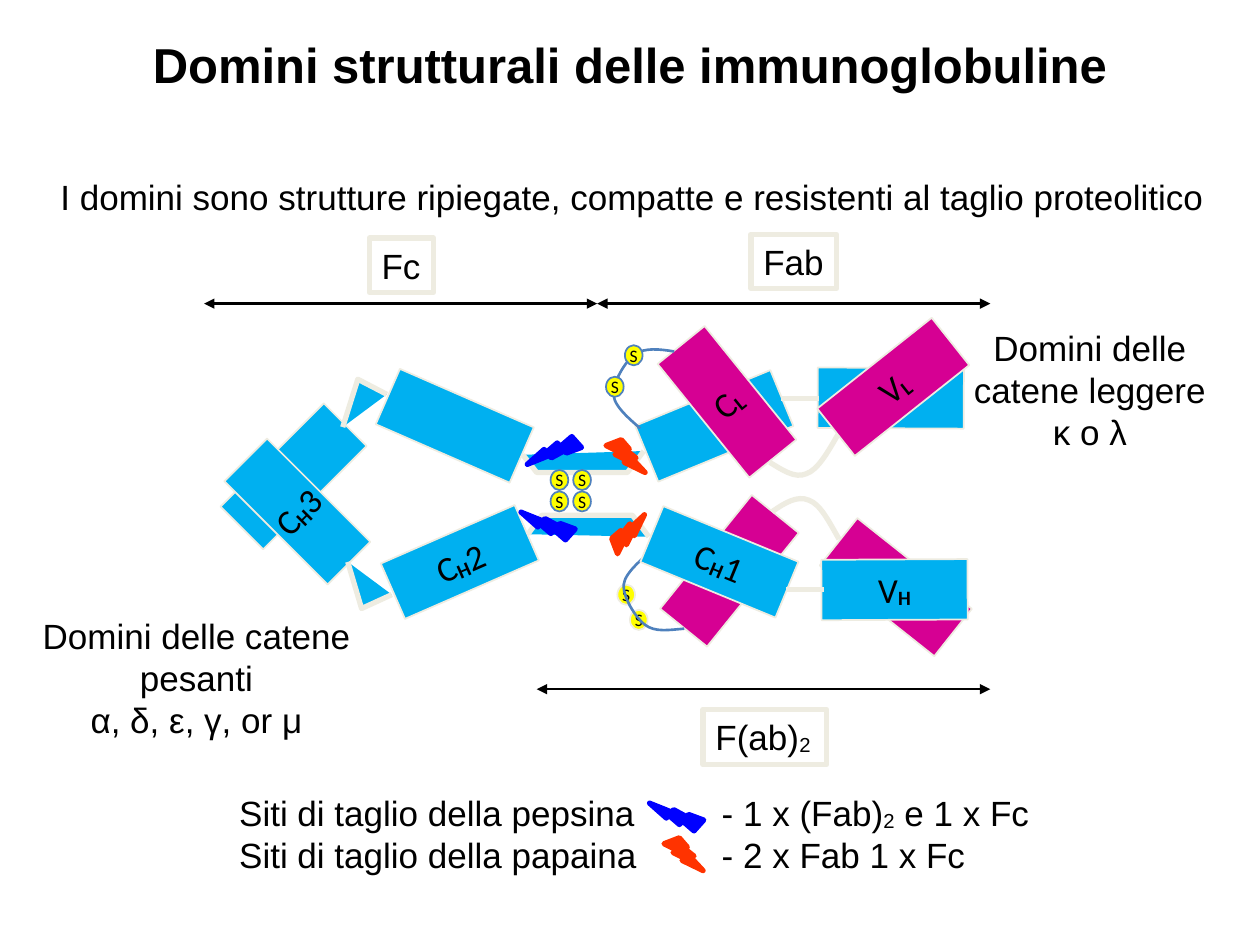
from lxml.etree import SubElement
from pptx import Presentation
from pptx.dml.color import RGBColor
from pptx.enum.shapes import MSO_CONNECTOR, MSO_SHAPE
from pptx.enum.text import MSO_ANCHOR, MSO_AUTO_SIZE, PP_ALIGN
from pptx.oxml.ns import qn
from pptx.util import Pt

PX = 9144
BLACK, BEIGE, STEEL = "000000", "EEECE1", "4F81BD"
HEAVY, LIGHT, YELLOW = "00B0F0", "D60093", "FFFF00"
PEPSIN, PAPAIN = "0000FF", "FF3300"


def rgb(value):
    return RGBColor.from_string(value)


def write(tf, text, size=20, font="Arial", bold=False, sub_bold=False,
          align=PP_ALIGN.CENTER, wrap=False, anchor=MSO_ANCHOR.TOP, inset=True, tab=None):
    tf.word_wrap = wrap
    tf.auto_size = MSO_AUTO_SIZE.NONE
    tf.vertical_anchor = anchor
    tf.margin_left = tf.margin_right = 10 * PX if inset else 0
    tf.margin_top = tf.margin_bottom = 5 * PX if inset else 0
    for i, line in enumerate(text.split("\n")):
        p = tf.add_paragraph() if i else tf.paragraphs[0]
        p.alignment = align
        if tab:
            tabs = SubElement(p._p.get_or_add_pPr(), qn("a:tabLst"))
            SubElement(tabs, qn("a:tab"), pos=str(tab * PX), algn="l")
        for j, part in enumerate(line.split("_")):
            if not part:
                continue
            r = p.add_run()
            r.text = part
            r.font.size, r.font.name = Pt(size), font
            r.font.bold = sub_bold if j % 2 else bold
            r.font.color.rgb = rgb(BLACK)
            if j % 2:
                r._r.get_or_add_rPr().set("baseline", "-6000")


class Diagram:
    def __init__(self, s):
        self.s = s
        self.shapes = s.shapes

    def paint(self, sp, fill, line, width):
        sp.shadow.inherit = False
        if fill:
            sp.fill.solid()
            sp.fill.fore_color.rgb = rgb(fill)
        else:
            sp.fill.background()
        sp.line.color.rgb = rgb(line)
        sp.line.width = Pt(width)
        return sp

    def shape(self, kind, x, y, w, h, fill, line, width=1, rot=0):
        sp = self.shapes.add_shape(kind, x * PX, y * PX, w * PX, h * PX)
        sp.rotation = rot
        return self.paint(sp, fill, line, width)

    def domain(self, x, y, rot, fill, text="", upright=False):
        sp = self.shape(MSO_SHAPE.RECTANGLE, x, y, 116, 48, fill, BEIGE, rot=rot)
        if text:
            write(sp.text_frame, text, font="Calibri", sub_bold=True,
                  anchor=MSO_ANCHOR.MIDDLE, inset=False)
        if upright:
            sp.text_frame._txBody.bodyPr.set("vert", "vert270")
        return sp

    def sulphur(self, x, y, line=STEEL):
        sp = self.shape(MSO_SHAPE.OVAL, x, y, 14, 16, YELLOW, line)
        write(sp.text_frame, "S", size=10, font="Calibri",
              anchor=MSO_ANCHOR.MIDDLE, inset=False)

    def bolt(self, x, y, w, h, color, rot=0, flip=False):
        sp = self.shape(MSO_SHAPE.LIGHTNING_BOLT, x, y, w, h, color, color, 3, rot)
        if flip:
            sp._element.spPr.xfrm.set("flipV", "1")

    def outline(self, points, fill=None, line=BEIGE, width=3):
        fb = self.shapes.build_freeform(*points[0], scale=PX)
        fb.add_line_segments(points[1:], close=False)
        return self.paint(fb.convert_to_shape(), fill, line, width)

    def curve(self, points, line=BEIGE, width=3):
        sp = self.outline(points, None, line, width)
        geom = next(sp._element.iter(qn("a:path")))
        steps = geom.findall(qn("a:lnTo"))
        for i in range(0, len(steps), 3):
            cubic = SubElement(geom, qn("a:cubicBezTo"))
            for step in steps[i:i + 3]:
                cubic.append(step[0])
                geom.remove(step)

    def line(self, x1, x2, y, color=BEIGE, width=3, arrows=False, ends=None):
        cx = self.shapes.add_connector(MSO_CONNECTOR.STRAIGHT, x1 * PX, y * PX, x2 * PX, y * PX)
        if ends:
            cx.begin_connect(ends[0], 3)
            cx.end_connect(ends[1], 1)
            cx.begin_x, cx.begin_y = x1 * PX, y * PX
            cx.end_x, cx.end_y = x2 * PX, y * PX
        cx.line.color.rgb = rgb(color)
        cx.line.width = Pt(width)
        if arrows:
            for tag in ("a:headEnd", "a:tailEnd"):
                SubElement(cx.line._get_or_add_ln(), qn(tag), type="triangle")
        SubElement(cx._element.spPr, qn("a:effectLst"))

    def span(self, x1, x2, y):
        self.line(x1, x2, y, BLACK, 1.5, arrows=True)

    def label(self, x, y, w, h, text):
        sp = self.shape(MSO_SHAPE.RECTANGLE, x, y, w, h, None, BEIGE, 3)
        write(sp.text_frame, text, align=PP_ALIGN.LEFT)

    def text(self, x, y, w, h, text, **fmt):
        write(self.shapes.add_textbox(x * PX, y * PX, w * PX, h * PX).text_frame, text, **fmt)

    def title(self, x, y, w, h, text):
        sp = self.shapes.title
        sp.left, sp.top, sp.width, sp.height = x * PX, y * PX, w * PX, h * PX
        write(sp.text_frame, text, size=28, bold=True)


def main():
    prs = Presentation()
    prs.slide_width, prs.slide_height = 1000 * PX, 750 * PX
    d = Diagram(prs.slides.add_slide(prs.slide_layouts[5]))
    d.title(107, 22, 786, 57, "Domini strutturali delle immunoglobuline")

    d.domain(175, 354, 315, HEAVY)
    d.domain(303, 314, 23.6, HEAVY)
    ch1 = d.domain(509, 314, 337.6, HEAVY)
    vh = d.domain(649, 292, 0.3, HEAVY)
    d.outline([(272, 339), (284, 301), (307, 313)], HEAVY)
    d.outline([(415, 361), (426, 375), (498, 375), (511, 358)], HEAVY)
    d.line(620, 650, 316, ends=(ch1, vh))

    d.domain(521, 429, 308.9, LIGHT)
    d.domain(653, 442, 38.4, LIGHT)
    d.curve([(613, 406), (623, 399), (633, 393), (642, 397), (651, 400), (658, 414), (666, 428)])
    d.domain(519, 295, 51.1, LIGHT, "C_L", upright=True)
    d.domain(651, 283, 321.6, LIGHT, "V_L")
    d.curve([(611, 367), (621, 373), (631, 380), (640, 376), (649, 373), (657, 359), (665, 345)])

    d.sulphur(500, 484, BEIGE)
    d.sulphur(490, 464, BEIGE)
    d.curve([(543, 499), (531, 500), (520, 502), (512, 496), (504, 490),
             (494, 473), (495, 464), (496, 454), (512, 442), (516, 438)], STEEL, 1.5)
    d.curve([(535, 279), (523, 277), (512, 276), (504, 281), (496, 287),
             (486, 304), (487, 314), (488, 324), (504, 336), (508, 340)], STEEL, 1.5)
    d.sulphur(496, 274)
    d.sulphur(481, 299)
    for x in (437, 455):
        for y in (390, 373):
            d.sulphur(x, y)

    d.domain(178, 382, 45, HEAVY, "C_H_3", upright=True)
    d.domain(307, 422, 336.4, HEAVY, "C_H_2")
    ch1 = d.domain(513, 422, 22.4, HEAVY, "C_H_1")
    vh = d.domain(652, 444, 359.7, HEAVY, "V_H")
    d.outline([(276, 446), (287, 483), (311, 472)], HEAVY)
    d.outline([(419, 424), (430, 409), (502, 409), (515, 426)], HEAVY)
    d.line(624, 654, 468, ends=(ch1, vh))

    d.span(474, 162, 241)
    d.label(293, 189, 51, 43, "Fc")
    d.span(474, 786, 241)
    d.label(596, 186, 68, 43, "Fab")
    d.span(426, 786, 547)
    d.label(558, 563, 98, 44, "F(ab)_2")

    d.text(30, 134, 944, 44,
           "I domini sono strutture ripiegate, compatte e resistenti al taglio proteolitico")
    d.bolt(481, 349, 31, 26, PAPAIN)
    d.bolt(483, 411, 31, 26, PAPAIN, 270)
    d.bolt(429, 336, 22, 43, PEPSIN, 90)
    d.bolt(424, 396, 22, 43, PEPSIN, 270, flip=True)
    d.text(180, 623, 680, 77,
           "Siti di taglio della pepsina\t- 1 x (Fab)_2_ e 1 x Fc\n"
           "Siti di taglio della papaina\t- 2 x Fab 1 x Fc",
           align=PP_ALIGN.LEFT, wrap=True, tab=383)
    d.bolt(527, 665, 31, 26, PAPAIN)
    d.bolt(526, 627, 22, 43, PEPSIN, 270, flip=True)
    d.text(762, 254, 206, 111, "Domini delle\ncatene leggere\nκ o λ")
    d.text(19, 483, 274, 111, "Domini delle catene\npesanti\nα, δ, ε, γ, or μ")
    prs.save("out.pptx")


if __name__ == "__main__":
    main()
